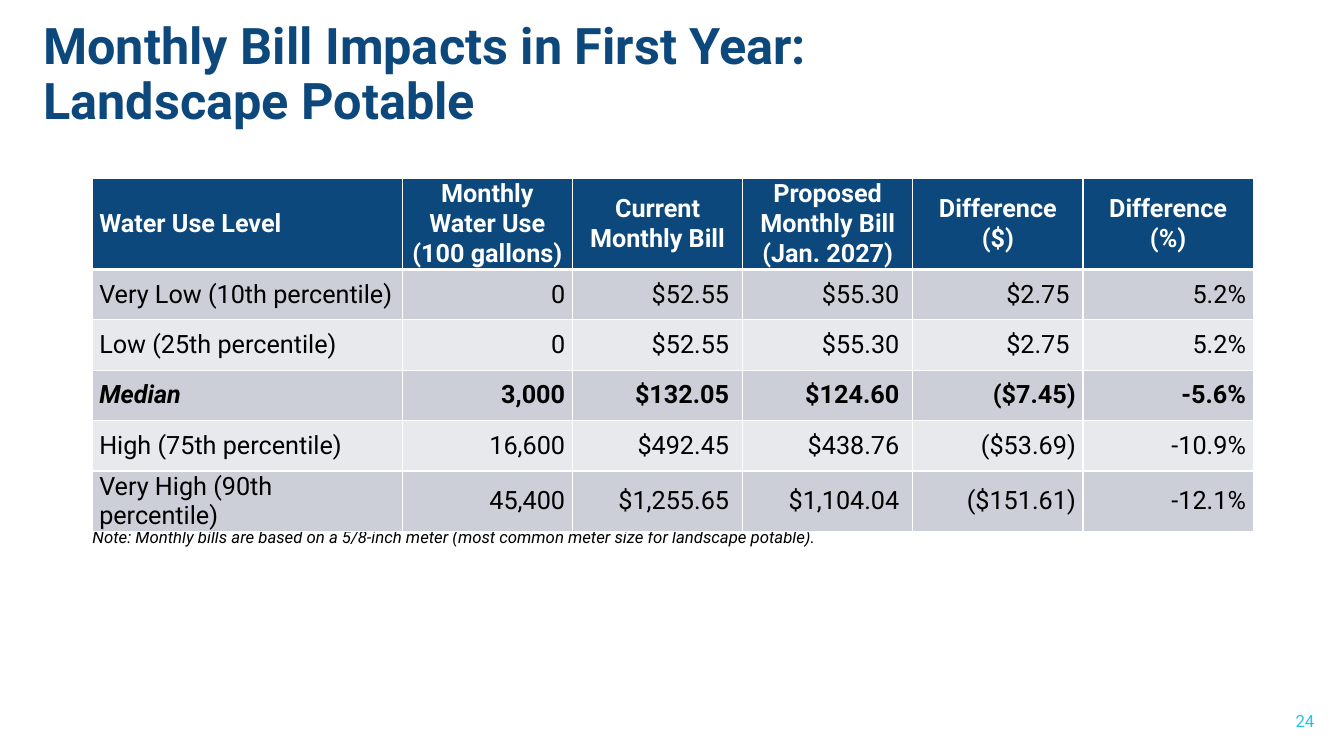
from dataclasses import dataclass

from lxml import etree
from pptx import Presentation
from pptx.dml.color import RGBColor
from pptx.enum import text
from pptx.oxml import ns
from pptx.util import Pt


@dataclass(frozen=True)
class Theme:
    font: str = "Roboto"
    navy: str = "0C487C"
    cyan: str = "24C2EB"
    black: str = "000000"
    white: str = "FFFFFF"
    bands: tuple[str, str] = ("CCCFD7", "E7E9EC")
    title_size: float = 36
    table_size: float = 18
    small_size: float = 12


@dataclass(frozen=True)
class UseLevel:
    name: str
    gallons: str
    current: str
    proposed: str
    difference: str
    percent: str
    emphasized: bool = False

    def cells(self) -> list[str]:
        return [self.name, self.gallons, self.current, self.proposed,
                self.difference, self.percent]


THEME = Theme()
LEFT, CENTER, RIGHT = (text.PP_ALIGN.LEFT, text.PP_ALIGN.CENTER,
                       text.PP_ALIGN.RIGHT)

HEADINGS = ["Water Use Level", "Monthly Water Use (100 gallons)",
            "Current Monthly Bill", "Proposed Monthly Bill (Jan. 2027)",
            "Difference ($)", "Difference (%)"]
# Positive dollar amounts end in a space that balances the closing parenthesis.
LEVELS = [
    UseLevel("Very Low (10th percentile)", "0",
             "$52.55 ", "$55.30 ", "$2.75 ", "5.2%"),
    UseLevel("Low (25th percentile)", "0",
             "$52.55 ", "$55.30 ", "$2.75 ", "5.2%"),
    UseLevel("Median", "3,000",
             "$132.05 ", "$124.60 ", "($7.45)", "-5.6%", emphasized=True),
    UseLevel("High (75th percentile)", "16,600",
             "$492.45 ", "$438.76 ", "($53.69)", "-10.9%"),
    UseLevel("Very High (90th percentile)", "45,400",
             "$1,255.65 ", "$1,104.04 ", "($151.61)", "-12.1%"),
]

TABLE_LEFT, TABLE_TOP = 65.7, 127.6
NAME_WIDTH, VALUE_WIDTH = 221.6, 121.6
HEADER_HEIGHT, ROW_HEIGHT = 60, 36
CELL_INSET = 5.2
THIN, THICK = 1, 3


def style(paragraph, size: float, color: str, align=LEFT,
          bold: bool = False, italic: bool = False) -> None:
    paragraph.alignment = align
    font = paragraph.font
    font.name, font.size = THEME.font, Pt(size)
    font.bold, font.italic = bold, italic
    font.color.rgb = RGBColor.from_string(color)


def add_title(slide, words: str) -> None:
    title = slide.shapes.title
    title.left, title.top = Pt(23.8), Pt(28.8)
    title.width, title.height = Pt(921.6), Pt(50.4)
    frame = title.text_frame
    frame.text = words
    frame.word_wrap = True
    frame.auto_size = text.MSO_AUTO_SIZE.NONE
    frame.vertical_anchor = text.MSO_ANCHOR.MIDDLE
    paragraph = frame.paragraphs[0]
    paragraph.line_spacing = 0.9
    style(paragraph, THEME.title_size, THEME.navy, bold=True)


def add_label(slide, words: str, box: tuple[float, float, float, float],
              color: str, anchor=text.MSO_ANCHOR.TOP, align=LEFT,
              italic: bool = False) -> None:
    frame = slide.shapes.add_textbox(*map(Pt, box)).text_frame
    frame.text = words
    frame.word_wrap = True
    frame.vertical_anchor = anchor
    style(frame.paragraphs[0], THEME.small_size, color, align, italic=italic)


def set_borders(cell, top: float, bottom: float) -> None:
    properties = cell._tc.get_or_add_tcPr()
    widths = {"a:lnL": THIN, "a:lnR": THIN, "a:lnT": top, "a:lnB": bottom}
    for position, (tag, width) in enumerate(widths.items()):
        line = etree.Element(ns.qn(tag), w=str(Pt(width)))
        fill = etree.SubElement(line, ns.qn("a:solidFill"))
        etree.SubElement(fill, ns.qn("a:srgbClr"), val=THEME.white)
        properties.insert(position, line)


def fill_cell(cell, words: str, fill: str, color: str, align,
              bold: bool, italic: bool) -> None:
    cell.text = words
    cell.vertical_anchor = text.MSO_ANCHOR.MIDDLE
    cell.margin_left = cell.margin_right = Pt(CELL_INSET)
    cell.margin_top = cell.margin_bottom = 0
    cell.fill.solid()
    cell.fill.fore_color.rgb = RGBColor.from_string(fill)
    style(cell.text_frame.paragraphs[0], THEME.table_size, color, align,
          bold, italic)


def add_bill_table(slide) -> None:
    widths = [NAME_WIDTH] + [VALUE_WIDTH] * (len(HEADINGS) - 1)
    heights = [HEADER_HEIGHT] + [ROW_HEIGHT] * len(LEVELS)
    table = slide.shapes.add_table(
        len(heights), len(widths), Pt(TABLE_LEFT), Pt(TABLE_TOP),
        Pt(sum(widths)), Pt(sum(heights))).table
    for column, width in zip(table.columns, widths):
        column.width = Pt(width)
    for row, height in zip(table.rows, heights):
        row.height = Pt(height)

    for c, heading in enumerate(HEADINGS):
        cell = table.cell(0, c)
        fill_cell(cell, heading, THEME.navy, THEME.white,
                  CENTER if c else LEFT, bold=True, italic=False)
        set_borders(cell, THIN, THICK)
    for r, level in enumerate(LEVELS):
        for c, words in enumerate(level.cells()):
            cell = table.cell(r + 1, c)
            fill_cell(cell, words, THEME.bands[r % 2], THEME.black,
                      RIGHT if c else LEFT, bold=level.emphasized,
                      italic=level.emphasized and c == 0)
            set_borders(cell, THIN if r else THICK, THIN)


def main() -> None:
    deck = Presentation()
    deck.slide_width, deck.slide_height = Pt(960), Pt(540)
    slide = deck.slides.add_slide(deck.slide_layouts.get_by_name("Title Only"))
    add_title(slide, "Monthly Bill Impacts in First Year:\vLandscape Potable")
    add_label(slide, "24", (730, 500.4, 216, 28.8), THEME.cyan,
              text.MSO_ANCHOR.MIDDLE, RIGHT)
    add_label(slide, "Note: Monthly bills are based on a 5/8-inch meter "
              "(most common meter size for landscape potable).",
              (59, 373, 813.6, 21.6), THEME.black, italic=True)
    add_bill_table(slide)
    deck.save("out.pptx")


if __name__ == "__main__":
    main()
